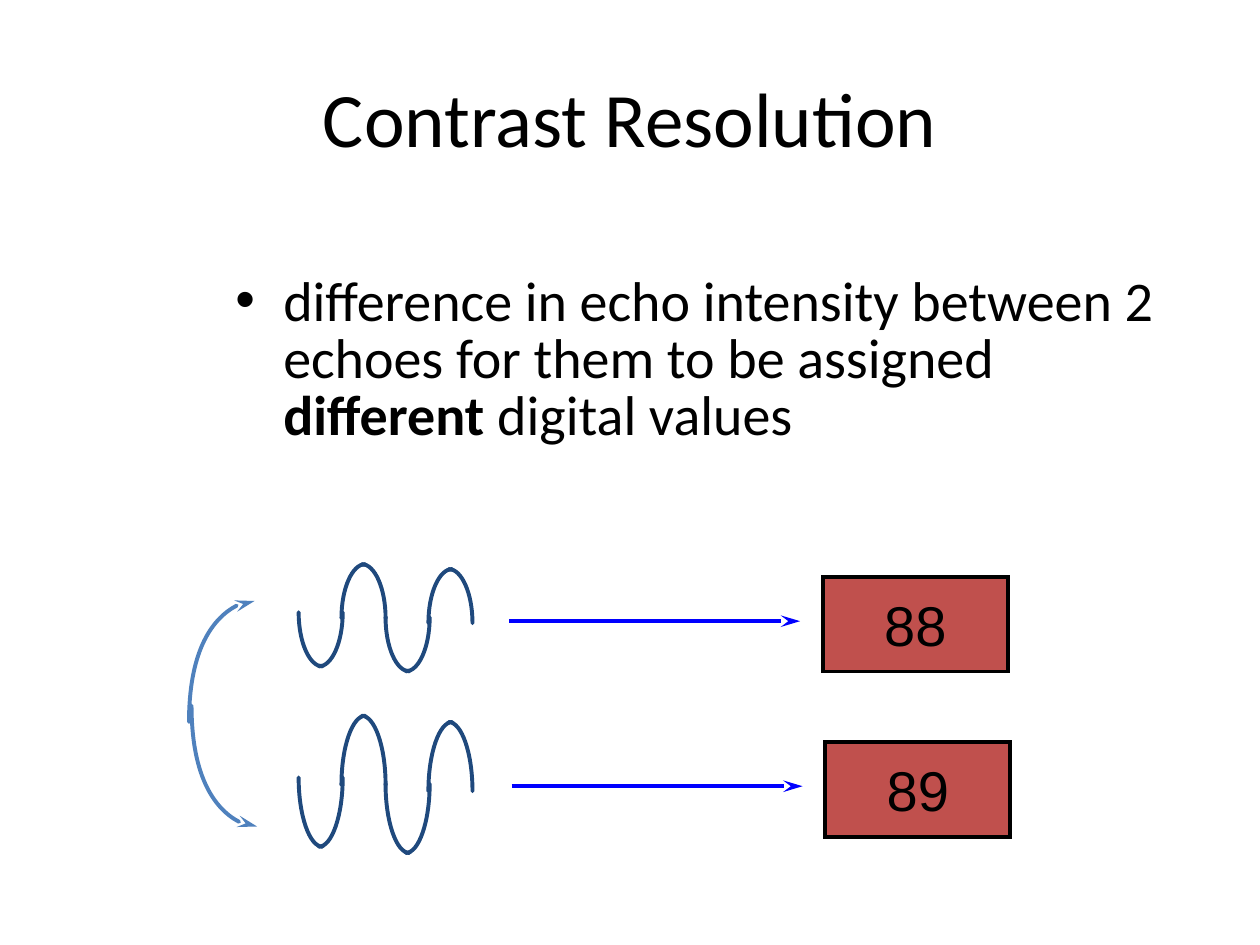
"""Build the contrast resolution slide with two echo waves and their digital values."""
import math
from dataclasses import dataclass

from lxml import etree
from pptx import Presentation
from pptx.dml.color import RGBColor
from pptx.enum.shapes import MSO_CONNECTOR, MSO_SHAPE
from pptx.enum.text import MSO_ANCHOR, PP_ALIGN
from pptx.oxml.ns import qn
from pptx.util import Inches, Pt

STRAIGHT = MSO_CONNECTOR.STRAIGHT
RECTANGLE = MSO_SHAPE.RECTANGLE
CENTER = PP_ALIGN.CENTER
MIDDLE = MSO_ANCHOR.MIDDLE
CURVE_RATIO = 0.55
HUMP_LEFTS = (2.37, 2.71, 3.06, 3.40)
HUMP_SHIFTS = (0, -0.89, 0.09, -0.8)


@dataclass(frozen=True)
class Theme:
    font: str = "Calibri"
    digit_font: str = "Arial"
    title_size: int = 44
    body_size: int = 32
    line_width: float = 2.25
    ink: str = "000000"
    wave: str = "1F497D"
    bracket: str = "4F81BD"
    arrow: str = "0000FF"
    value: str = "C0504D"


class SlideBuilder:
    def __init__(self, page, theme):
        self.page = page
        self.theme = theme

    def style_span(self, span, size, bold=False):
        span.font.name = self.theme.font
        span.font.size = Pt(size)
        span.font.bold = bold
        span.font.color.rgb = RGBColor.from_string(self.theme.ink)

    def style_line(self, line, color, join, arrow_end=None):
        line.color.rgb = RGBColor.from_string(color)
        line.width = Pt(self.theme.line_width)
        outline = line._get_or_add_ln()
        etree.SubElement(outline, qn(f"a:{join}"))
        if join == "round":
            outline.set("cap", "rnd")
        if arrow_end:
            etree.SubElement(outline, qn(f"a:{arrow_end}"),
                             type="stealth", w="med", len="lg")

    def text_frame(self, left, top, width, height):
        box = self.page.shapes.add_textbox(
            Inches(left), Inches(top), Inches(width), Inches(height))
        box.text_frame.word_wrap = True
        return box.text_frame

    def title(self, text, left, top, width, height):
        frame = self.text_frame(left, top, width, height)
        frame.vertical_anchor = MIDDLE
        frame.text = text
        para = frame.paragraphs[0]
        para.alignment = CENTER
        self.style_span(para.runs[0], self.theme.title_size)

    def bullet(self, parts, left, top, width, height):
        para = self.text_frame(left, top, width, height).paragraphs[0]
        para.line_spacing = 0.85
        para.space_before = Pt(6.4)
        for text, bold in parts:
            span = para.add_run()
            span.text = text
            self.style_span(span, self.theme.body_size, bold)
        properties = para._p.get_or_add_pPr()
        properties.set("marL", str(Inches(0.38)))
        properties.set("indent", str(Inches(-0.38)))
        etree.SubElement(properties, qn("a:buFont"), typeface="Arial")
        etree.SubElement(properties, qn("a:buChar"), char="•")

    def quarter_arc(self, center, radii, start, color, arrow_end=None):
        (cos_a, sin_a), (cos_b, sin_b) = [
            (round(math.cos(math.radians(angle))), round(math.sin(math.radians(angle))))
            for angle in (start, start + 90)]
        directions = ((cos_a, sin_a),
                      (cos_a + CURVE_RATIO * cos_b, sin_a + CURVE_RATIO * sin_b),
                      (cos_b + CURVE_RATIO * cos_a, sin_b + CURVE_RATIO * sin_a),
                      (cos_b, sin_b))
        points = [(Inches(center[0] + radii[0] * across), Inches(center[1] + radii[1] * down))
                  for across, down in directions]
        builder = self.page.shapes.build_freeform(*points[0])
        builder.add_line_segments(points[-1:], close=False)
        arc = builder.convert_to_shape()
        segment = next(arc._element.iter(qn("a:lnTo")))
        curve = etree.Element(qn("a:cubicBezTo"))
        for x, y in points[1:]:
            etree.SubElement(curve, qn("a:pt"), x=str(x - arc.left), y=str(y - arc.top))
        segment.getparent().replace(segment, curve)
        arc.shadow.inherit = False
        arc.fill.background()
        self.style_line(arc.line, color, "round", arrow_end)

    def wave(self, top, height):
        for index, (left, shift) in enumerate(zip(HUMP_LEFTS, HUMP_SHIFTS)):
            is_crest = index % 2
            center_y = top + (shift + is_crest) * height
            right_start, left_start = (270, 180) if is_crest else (0, 90)
            for offset, start in ((0.16, right_start), (0.19, left_start)):
                self.quarter_arc((left + offset, center_y), (0.19, height),
                                 start, self.theme.wave)

    def arrow(self, left, right, y):
        connector = self.page.shapes.add_connector(
            STRAIGHT, Inches(left), Inches(y), Inches(right), Inches(y))
        self.style_line(connector.line, self.theme.arrow, "miter", "tailEnd")
        etree.SubElement(connector._element.spPr, qn("a:effectLst"))

    def value_box(self, text, left, top):
        box = self.page.shapes.add_shape(
            RECTANGLE, Inches(left), Inches(top), Inches(1.47), Inches(0.75))
        box.shadow.inherit = False
        box.fill.solid()
        box.fill.fore_color.rgb = RGBColor.from_string(self.theme.value)
        self.style_line(box.line, self.theme.ink, "miter")
        frame = box.text_frame
        frame.word_wrap = False
        frame.vertical_anchor = MIDDLE
        frame.text = text
        para = frame.paragraphs[0]
        para.alignment = CENTER
        para._p.get_or_add_pPr().set("rtl", "1")
        span = para.runs[0]
        self.style_span(span, self.theme.body_size)
        etree.SubElement(span._r.get_or_add_rPr(), qn("a:cs"),
                         typeface=self.theme.digit_font)


def main():
    deck = Presentation()
    deck.slide_width, deck.slide_height = Inches(10), Inches(7.5)
    theme = Theme()
    slide = SlideBuilder(deck.slides.add_slide(deck.slide_layouts[6]), theme)

    slide.title("Contrast Resolution", 0.5, 0.3, 9, 1.25)
    slide.bullet([
        ("difference in echo intensity between 2 echoes for them to be assigned ", False),
        ("different", True),
        (" digital values", False),
    ], 1.77, 2.14, 7.83, 4.5)

    for value, wave_top, wave_height, box_left, box_top in (
            ("89", 6.17, 0.55, 6.55, 5.89),
            ("88", 4.86, 0.43, 6.53, 4.58)):
        slide.wave(wave_top, wave_height)
        slide.value_box(value, box_left, box_top)
        slide.arrow(box_left - 2.49, box_left - 0.18, box_top + 0.35)

    bracket_radii = (0.52, 0.96)
    slide.quarter_arc((2.02, 5.73), bracket_radii, 180, theme.bracket, "tailEnd")
    slide.quarter_arc((2.04, 5.6), bracket_radii, 90, theme.bracket, "headEnd")
    deck.save("out.pptx")


if __name__ == "__main__":
    main()
